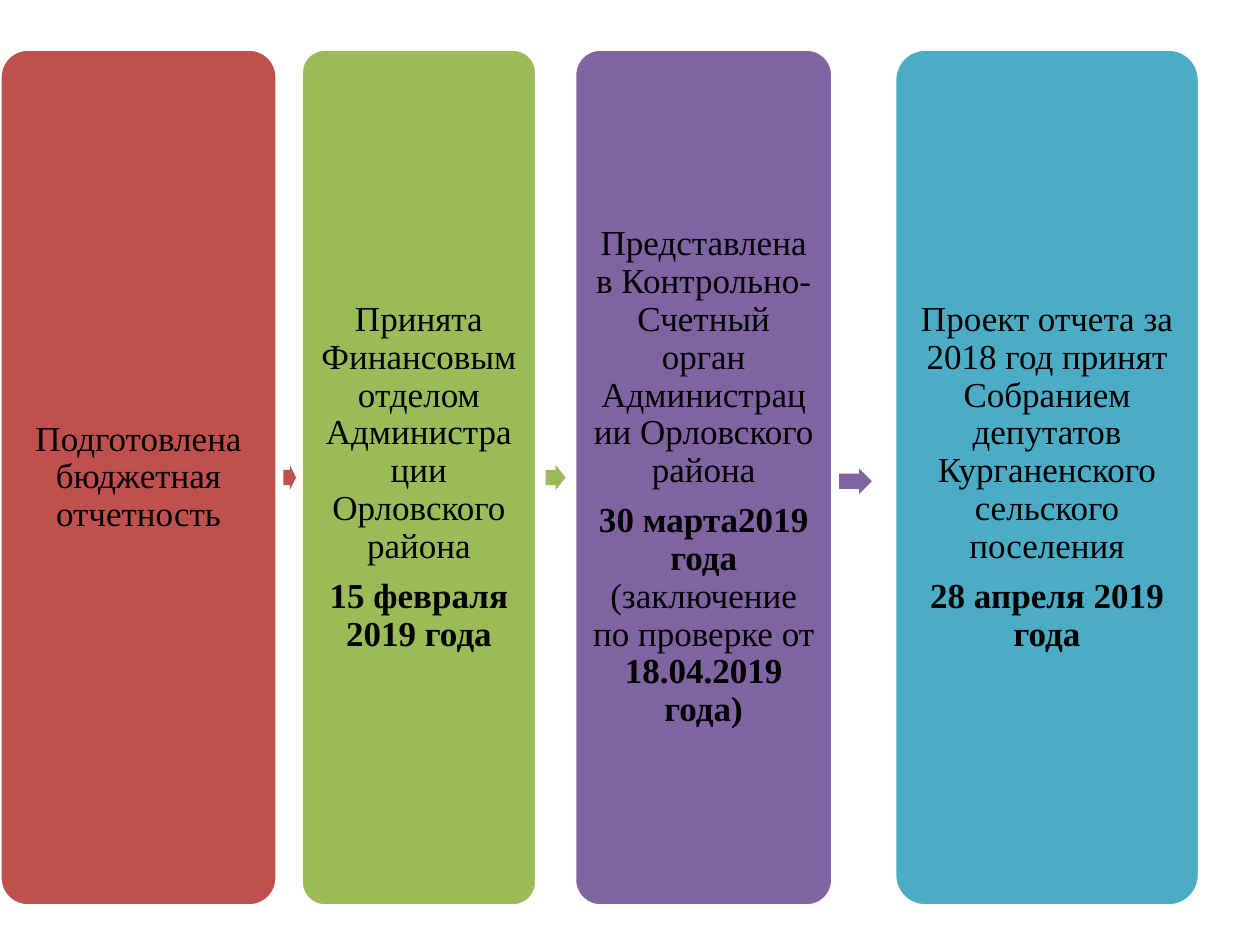
"""Build a slide with the four approval stages of the 2018 budget report."""
from dataclasses import dataclass

from pptx import Presentation
from pptx.dml.color import RGBColor
from pptx.enum.shapes import MSO_SHAPE
from pptx.enum.text import MSO_ANCHOR, PP_ALIGN
from pptx.util import Pt

CARD = MSO_SHAPE.ROUNDED_RECTANGLE
ARROW = MSO_SHAPE.RIGHT_ARROW
MIDDLE = MSO_ANCHOR.MIDDLE
CENTER = PP_ALIGN.CENTER

PX = 9144
SLIDE_W, SLIDE_H = 1000, 750
CARD_TOP, CARD_H = 39, 680
ARROW_H = 20
INSET = 8


@dataclass(frozen=True)
class Theme:
    font: str = "Times New Roman"
    size: int = 20
    space_after: int = 7
    line_spacing: float = 0.9
    border: int = 2
    text: str = "000000"
    outline: str = "FFFFFF"
    red: str = "C0504D"
    green: str = "9BBB59"
    purple: str = "8064A2"
    teal: str = "4BACC6"


@dataclass(frozen=True)
class Run:
    text: str
    bold: bool = False


@dataclass(frozen=True)
class Stage:
    left: int
    width: int
    color: str
    paragraphs: tuple[tuple[Run, ...], ...]


@dataclass(frozen=True)
class Arrow:
    left: int
    top: int
    width: int
    color: str


THEME = Theme()

STAGES = (
    Stage(0, 220, THEME.red, (
        (Run("Подготовлена бюджетная отчетность"),),
    )),
    Stage(239, 187, THEME.green, (
        (Run("Принята Финансовым отделом Администрации Орловского района"),),
        (Run("15 февраля 2019 года", True),),
    )),
    Stage(456, 205, THEME.purple, (
        (Run("Представлена в Контрольно-Счетный орган Администрации Орловского района"),),
        (Run("30 марта2019 года ", True), Run("(заключение по проверке от "),
         Run("18.04.2019 года)", True)),
    )),
    Stage(710, 242, THEME.teal, (
        (Run("Проект отчета за 2018 год принят Собранием депутатов "
             "Курганенского сельского поселения"),),
        (Run("28 апреля 2019 года", True),),
    )),
)

ARROWS = (
    Arrow(225, 369, 10, THEME.red),
    Arrow(433, 369, 16, THEME.green),
    Arrow(666, 372, 26, THEME.purple),
)


def add_block(s, kind, left: int, top: int, width: int, height: int, color: str,
              adjustments: tuple[float, ...]):
    """Add a filled preset shape without a line or shadow."""
    sp = s.shapes.add_shape(kind, left * PX, top * PX, width * PX, height * PX)
    for i, value in enumerate(adjustments):
        sp.adjustments[i] = value
    sp.shadow.inherit = False
    sp.fill.solid()
    sp.fill.fore_color.rgb = RGBColor.from_string(color)
    sp.line.fill.background()
    return sp


def add_run(p, text: str, *, bold: bool = False) -> None:
    """Append one formatted run to a paragraph."""
    r = p.add_run()
    r.text = text
    r.font.name = THEME.font
    r.font.size = Pt(THEME.size)
    r.font.bold = bold
    r.font.color.rgb = RGBColor.from_string(THEME.text)


def add_stage(s, stage: Stage) -> None:
    """Add one outlined card with its centred text."""
    sp = add_block(s, CARD, stage.left, CARD_TOP, stage.width, CARD_H, stage.color, (0.1,))
    sp.line.color.rgb = RGBColor.from_string(THEME.outline)
    sp.line.width = Pt(THEME.border)
    tf = sp.text_frame
    tf.word_wrap = True
    tf.vertical_anchor = MIDDLE
    tf.margin_left = tf.margin_right = tf.margin_top = tf.margin_bottom = INSET * PX
    for i, runs in enumerate(stage.paragraphs):
        p = tf.add_paragraph() if i else tf.paragraphs[0]
        p.alignment = CENTER
        p.line_spacing = THEME.line_spacing
        p.space_after = Pt(THEME.space_after)
        for run in runs:
            add_run(p, run.text, bold=run.bold)


def add_arrow(s, arrow: Arrow) -> None:
    """Add one block arrow between two cards."""
    add_block(s, ARROW, arrow.left, arrow.top, arrow.width, ARROW_H, arrow.color, (0.6, 0.5))


def main() -> None:
    """Build and save the presentation."""
    prs = Presentation()
    prs.slide_width, prs.slide_height = SLIDE_W * PX, SLIDE_H * PX
    s = prs.slides.add_slide(prs.slide_layouts[6])
    for stage in STAGES:
        add_stage(s, stage)
    for arrow in ARROWS:
        add_arrow(s, arrow)
    prs.save("out.pptx")


if __name__ == "__main__":
    main()
